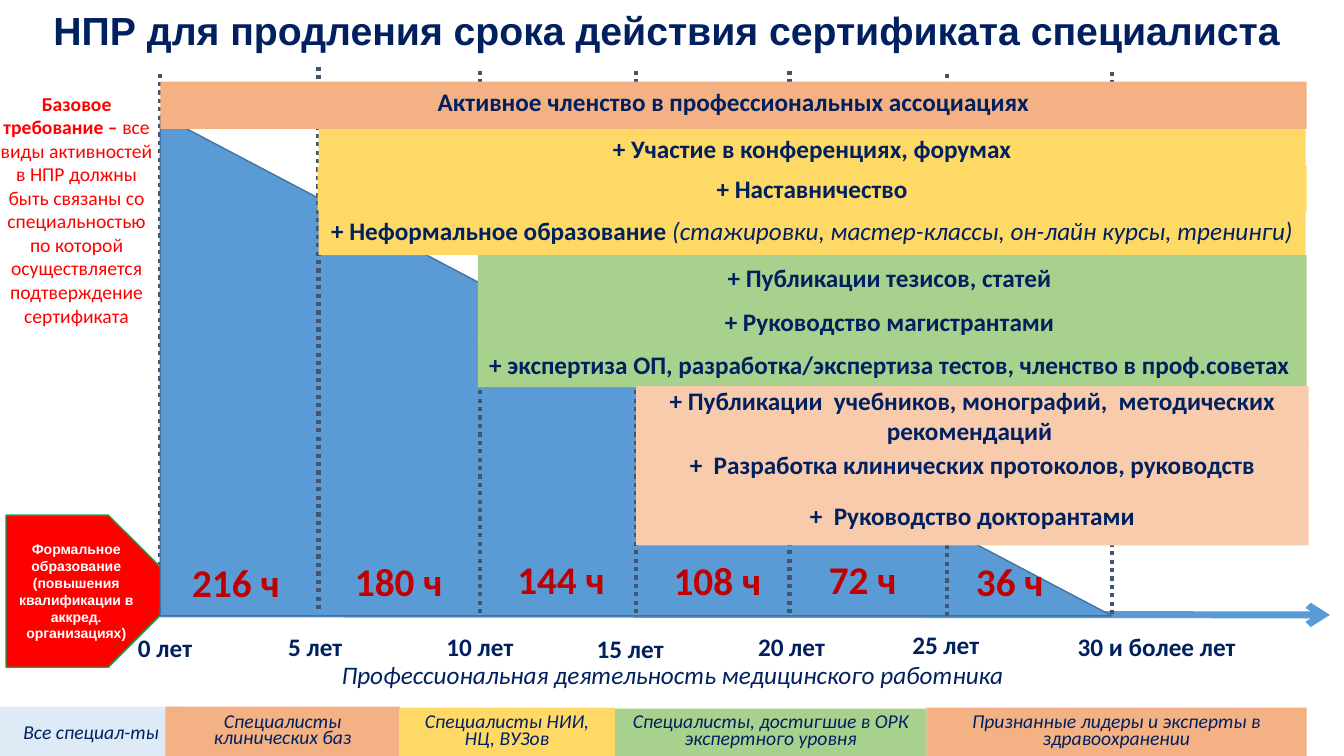
from dataclasses import dataclass

from pptx import Presentation
from pptx import util as u
from pptx.dml.color import RGBColor
from pptx.enum import dml, shapes, text
from pptx.oxml.ns import qn
from lxml import etree

NAVY, RED, CRIMSON, WHITE = "002060", "FF0000", "C00000", "FFFFFF"
BLUE, BLUE_EDGE, SLATE, GREEN_EDGE = "5B9BD5", "43739E", "44546A", "00B050"
ORANGE, YELLOW, GREEN, PEACH, PALE = "F4B183", "FFD966", "A9D18E", "F8CBAD", "DEEBF7"


@dataclass
class Span:
    words: str
    bold: bool = False
    italic: bool = False


@dataclass
class Style:
    size: float
    color: str = NAVY
    bold: bool = False
    italic: bool = False
    font: str = "Calibri"
    spacing: float = 1.0


@dataclass
class Band:
    """A filled rectangle with one paragraph of text."""
    left: float
    top: float
    width: float
    height: float
    fill: str
    words: str
    spacing: float = 1.0
    remark: str = ""


@dataclass
class Milestone:
    """A year on the career axis, with its dotted line and label."""
    x: float
    line_top: float
    line_bottom: float
    label: str
    label_left: float
    label_top: float
    label_width: float


@dataclass
class Hours:
    left: float
    top: float
    width: float
    words: str


BAND = Style(18, bold=True)
LEGEND = Style(14, italic=True)
YEAR = Style(18, bold=True)
HOURS = Style(28, CRIMSON, bold=True)

MILESTONES = [
    Milestone(1.59, 0.73, 6.13, "0 лет", 1.27, 6.22, 0.74),
    Milestone(3.16, 0.66, 6.06, "5 лет", 2.76, 6.21, 0.74),
    Milestone(4.76, 0.70, 6.09, "10 лет", 4.33, 6.21, 0.87),
    Milestone(6.31, 0.70, 6.09, "15 лет", 5.82, 6.23, 0.87),
    Milestone(7.83, 0.70, 6.09, "20 лет", 7.42, 6.21, 0.87),
    Milestone(9.39, 0.73, 6.13, "25 лет", 8.95, 6.19, 0.87),
    Milestone(11.03, 0.71, 6.10, "30 и более лет", 10.59, 6.21, 1.78),
]
HOUR_LABELS = [
    Hours(1.72, 5.49, 1.24, "216 ч"),
    Hours(3.34, 5.48, 1.23, "180 ч"),
    Hours(4.96, 5.46, 1.21, "144 ч"),
    Hours(6.47, 5.47, 1.29, "108 ч"),
    Hours(8.03, 5.46, 1.05, "72 ч"),
    Hours(9.49, 5.48, 1.05, "36 ч"),
]
LEGEND_BANDS = [
    Band(-0.02, 7.01, 1.85, 0.49, PALE, "Все специал-ты"),
    Band(1.64, 7.01, 2.33, 0.49, ORANGE, "Специалисты клинических баз", 0.7),
    Band(3.96, 7.02, 2.14, 0.48, YELLOW, "Специалисты НИИ, НЦ, ВУЗов", 0.7),
    Band(6.10, 7.03, 3.09, 0.47, GREEN, "Специалисты, достигшие в ОРК экспертного уровня", 0.7),
    Band(9.19, 7.02, 3.77, 0.48, ORANGE, "Признанные лидеры и эксперты в здравоохранении", 0.7),
]
ACTIVITY_BANDS = [
    Band(3.15, 1.65, 9.81, 0.44, YELLOW, "+ Наставничество"),
    Band(3.16, 1.28, 9.79, 0.38, YELLOW, "+ Участие в конференциях, форумах"),
    Band(3.16, 2.04, 9.79, 0.49, YELLOW, "+ Неформальное образование ",
         remark="(стажировки, мастер-классы, он-лайн курсы, тренинги)"),
    Band(1.59, 0.81, 11.37, 0.47, ORANGE, "Активное членство в профессиональных ассоциациях", 0.7),
    Band(4.74, 2.53, 8.22, 0.45, GREEN, "+ Публикации тезисов, статей "),
    Band(4.74, 2.96, 8.22, 0.45, GREEN, "+ Руководство магистрантами "),
    Band(4.74, 3.39, 8.22, 0.45, GREEN,
         "+ экспертиза ОП, разработка/экспертиза тестов, членство в проф.советах "),
    Band(6.31, 4.39, 6.67, 0.51, PEACH, "+  Разработка клинических протоколов, руководств", 0.7),
    Band(6.31, 3.83, 6.67, 0.58, PEACH,
         "+ Публикации  учебников, монографий,  методических рекомендаций "),
    Band(6.31, 4.90, 6.67, 0.51, PEACH, "+  Руководство докторантами", 0.7),
]


def paint(target, color: str) -> None:
    """Give a fill one solid colour."""
    target.solid()
    target.fore_color.rgb = RGBColor.from_string(color)


def write(frame, spans: list[Span], style: Style, align=text.PP_ALIGN.CENTER) -> None:
    para = frame.paragraphs[0]
    para.alignment = align
    para.line_spacing = style.spacing
    para.font.size = u.Pt(style.size)
    para.font.name = style.font
    para.font.color.rgb = RGBColor.from_string(style.color)
    if len(spans) == 1:
        para.font.bold, para.font.italic = style.bold, style.italic
    for span in spans:
        run = para.add_run()
        run.text = span.words
        if len(spans) > 1:
            run.font.bold, run.font.italic = span.bold, span.italic


def add_figure(page, kind, left: float, top: float, width: float, height: float,
               fill: str, edge: str = ""):
    figure = page.shapes.add_shape(kind, u.Inches(left), u.Inches(top),
                                   u.Inches(width), u.Inches(height))
    figure.shadow.inherit = False
    paint(figure.fill, fill)
    if edge:
        paint(figure.line.fill, edge)
        figure.line.width = u.Pt(1)
    else:
        figure.line.fill.background()
    figure.text_frame.word_wrap = True
    figure.text_frame.vertical_anchor = text.MSO_ANCHOR.MIDDLE
    return figure


def add_band(page, band: Band, style: Style) -> None:
    box = add_figure(page, shapes.MSO_SHAPE.RECTANGLE, band.left, band.top,
                     band.width, band.height, band.fill)
    spans = [Span(band.words, bold=True)]
    if band.remark:
        spans.append(Span(band.remark, italic=True))
    write(box.text_frame, spans, Style(style.size, style.color, style.bold, style.italic,
                                       style.font, band.spacing))


def add_label(page, left: float, top: float, width: float, height: float,
              spans: list[Span], style: Style, wrap: bool = True) -> None:
    """Add a text box; wrapped text is centred, unwrapped text starts at the left."""
    box = page.shapes.add_textbox(u.Inches(left), u.Inches(top), u.Inches(width), u.Inches(height))
    box.text_frame.word_wrap = wrap
    box.text_frame.auto_size = text.MSO_AUTO_SIZE.SHAPE_TO_FIT_TEXT
    write(box.text_frame, spans, style, text.PP_ALIGN.CENTER if wrap else text.PP_ALIGN.LEFT)


def add_line(page, x1: float, y1: float, x2: float, y2: float, color: str, width: float):
    line = page.shapes.add_connector(shapes.MSO_CONNECTOR.STRAIGHT, u.Inches(x1), u.Inches(y1),
                                     u.Inches(x2), u.Inches(y2))
    paint(line.line.fill, color)
    line.line.width = u.Pt(width)
    etree.SubElement(line._element.spPr, qn("a:effectLst"))
    return line


def add_year_line(page, year: Milestone) -> None:
    line = add_line(page, year.x, year.line_top, year.x, year.line_bottom, SLATE, 3)
    line.line.dash_style = dml.MSO_LINE.ROUND_DOT


def add_title(page, words: str) -> None:
    title = page.shapes.title
    title.left, title.top = u.Inches(0), u.Inches(0)
    title.width, title.height = u.Inches(13.33), u.Inches(0.65)
    title.text_frame.auto_size = text.MSO_AUTO_SIZE.NONE
    title.text_frame.vertical_anchor = text.MSO_ANCHOR.MIDDLE
    write(title.text_frame, [Span(words)], Style(28, bold=True, font="Arial", spacing=0.9))


def main() -> None:
    deck = Presentation()
    deck.slide_width, deck.slide_height = u.Inches(13.33), u.Inches(7.5)
    page = deck.slides.add_slide(deck.slide_layouts[5])
    add_title(page, "НПР для продления срока действия сертификата специалиста ")

    axis = add_line(page, 1.59, 6.09, 13.19, 6.1, BLUE, 5)
    etree.SubElement(axis.line._get_or_add_ln(), qn("a:tailEnd"), type="arrow")
    add_year_line(page, MILESTONES[0])

    plate = add_figure(page, shapes.MSO_SHAPE.PENTAGON, 0.06, 5.11, 1.77, 1.51, RED, GREEN_EDGE)
    write(plate.text_frame,
          [Span("Формальное образование (повышения квалификации в аккред. организациях)")],
          Style(10, WHITE, bold=True, font="Arial"))
    for band in LEGEND_BANDS:
        add_band(page, band, LEGEND)
    for year in MILESTONES:
        add_label(page, year.label_left, year.label_top, year.label_width, 0.4,
                  [Span(year.label)], YEAR, wrap=False)
    add_label(page, 3.29, 6.49, 7.48, 0.4,
              [Span("Профессиональная деятельность медицинского работника")],
              Style(18, italic=True), wrap=False)

    add_figure(page, shapes.MSO_SHAPE.RIGHT_TRIANGLE, 1.59, 1.14, 9.44, 4.97, BLUE, BLUE_EDGE)
    for year in MILESTONES[1:]:
        add_year_line(page, year)
    for hours in HOUR_LABELS:
        add_label(page, hours.left, hours.top, hours.width, 0.57, [Span(hours.words)], HOURS)
    for band in ACTIVITY_BANDS:
        add_band(page, band, BAND)
    add_label(page, -0.11, 0.86, 1.74, 2.69,
              [Span("Базовое требование – ", bold=True),
               Span("все виды активностей в НПР должны быть связаны со специальностью "
                    "по которой осуществляется подтверждение сертификата")],
              Style(14, RED))
    deck.save("out.pptx")


if __name__ == "__main__":
    main()
